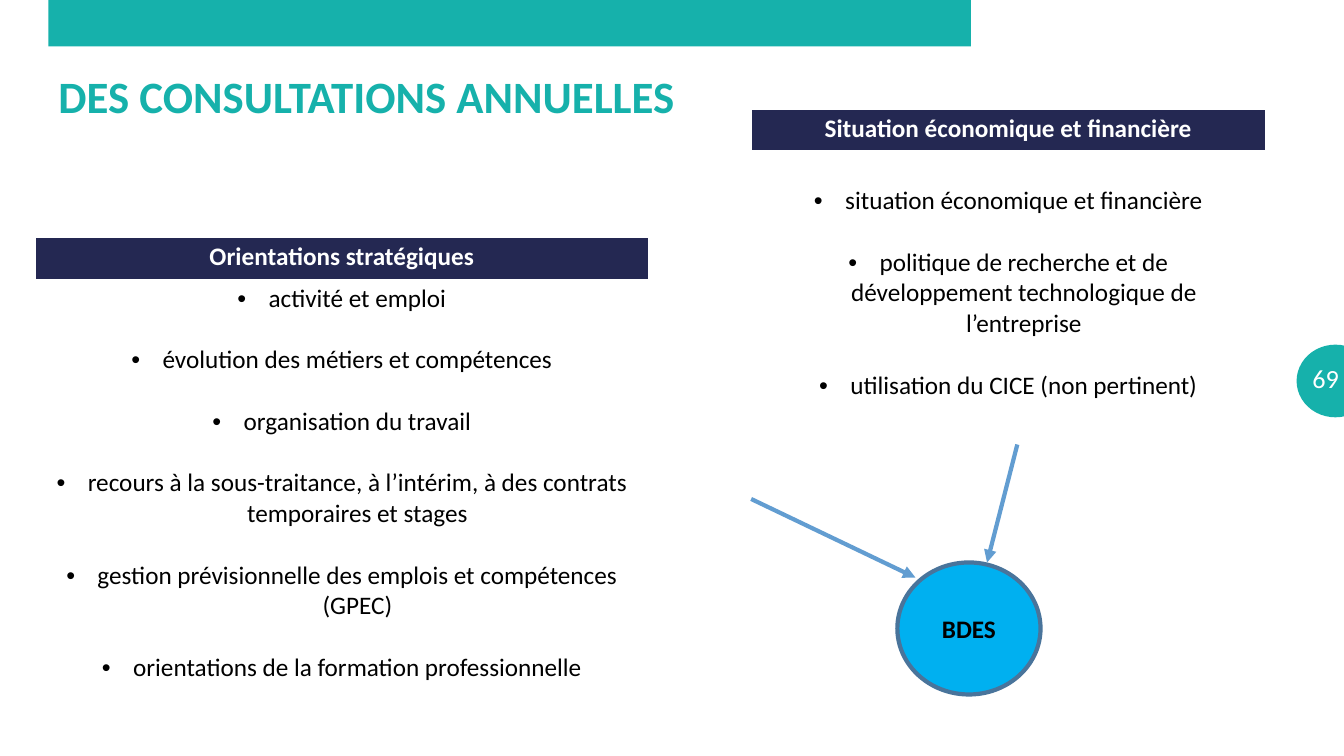
from lxml.etree import SubElement
from pptx import Presentation
from pptx.dml.color import RGBColor
from pptx.enum.shapes import MSO_CONNECTOR, MSO_SHAPE
from pptx.enum.text import MSO_ANCHOR, MSO_AUTO_SIZE, PP_ALIGN
from pptx.oxml.ns import qn
from pptx.util import Inches, Pt

TITLE = "DES CONSULTATIONS ANNUELLES"
PAGE_NUMBER = "69"
HUB = "BDES"
TEAL, NAVY, WHITE, BLACK = "16B1AB", "242852", "FFFFFF", "000000"
SKY, STEEL, ARROW_BLUE = "00B0F0", "49749B", "629DD1"
LINE_GAP = 22  # one empty line between bullets, in points

CONSULTATIONS = [
    {
        "heading": "Orientations stratégiques",
        "place": (0.35, 2.36, 6.08), "rows": (0.41, 4.28),
        "side_margin": 0.07, "body_top": 0.04,
        "topics": [
            "activité et emploi",
            "évolution des métiers et compétences",
            "organisation du travail",
            "recours à la sous-traitance, à l’intérim, à des contrats temporaires et stages",
            "gestion prévisionnelle des emplois et compétences (GPEC)",
            "orientations de la formation professionnelle",
        ],
    },
    {
        "heading": "Situation économique et financière",
        "place": (7.45, 1.09, 5.1), "rows": (0.4, 3.74),
        "side_margin": 0.14, "body_top": 0.35,
        "topics": [
            "situation économique et financière",
            "politique de recherche et de développement technologique de l’entreprise",
            "utilisation du CICE (non pertinent)",
        ],
    },
]
ARROWS = [((7.45, 4.95), (9.08, 5.73)), ((10.09, 4.41), (9.79, 5.58))]


def color(value):
    return RGBColor.from_string(value)


def inches(values):
    return [Inches(value) for value in values]


def set_all(target, values):
    for name, value in values.items():
        setattr(target, name, value)


def write(paragraph, text, size, ink, bold=False, align=PP_ALIGN.CENTER):
    paragraph.text = text
    paragraph.alignment = align
    set_all(paragraph.runs[0].font,
            {"name": "Calibri", "size": Pt(size), "bold": bold})
    paragraph.runs[0].font.color.rgb = color(ink)


def add_bullet(paragraph):
    properties = paragraph._p.get_or_add_pPr()
    properties.set("marL", str(Inches(0.31)))
    properties.set("indent", str(-Inches(0.31)))
    SubElement(properties, qn("a:buFont")).set("typeface", "Arial")
    SubElement(properties, qn("a:buChar")).set("char", "•")


def add_block(slide, kind, place, fill, outline=None, width=0):
    shape = slide.shapes.add_shape(kind, *inches(place))
    shape.shadow.inherit = False
    shape.fill.solid()
    shape.fill.fore_color.rgb = color(fill)
    if outline:
        shape.line.color.rgb = color(outline)
        shape.line.width = Pt(width)
    else:
        shape.line.fill.background()
    return shape


def add_consultation(slide, consultation):
    rows = consultation["rows"]
    frame = slide.shapes.add_table(
        2, 1, *inches((*consultation["place"], sum(rows))))
    table = frame.table
    table.horz_banding = False
    tops = (0.04, consultation["body_top"])
    for index, (height, top, fill) in enumerate(zip(rows, tops, (NAVY, WHITE))):
        table.rows[index].height = Inches(height)
        cell = table.cell(index, 0)
        cell.fill.solid()
        cell.fill.fore_color.rgb = color(fill)
        side = Inches(consultation["side_margin"])
        set_all(cell, {"margin_left": side, "margin_right": side,
                       "margin_top": Inches(top), "margin_bottom": Inches(0.04)})
    write(table.cell(0, 0).text_frame.paragraphs[0],
          consultation["heading"], 18, WHITE, bold=True)
    body = table.cell(1, 0).text_frame
    for index, topic in enumerate(consultation["topics"]):
        paragraph = body.add_paragraph() if index else body.paragraphs[0]
        if index:
            paragraph.space_before = Pt(LINE_GAP)
        add_bullet(paragraph)
        write(paragraph, topic, 18, BLACK)


def add_arrow(slide, start, end):
    arrow = slide.shapes.add_connector(
        MSO_CONNECTOR.STRAIGHT, *inches((*start, *end)))
    arrow.line.color.rgb = color(ARROW_BLUE)
    arrow.line.width = Pt(3)
    SubElement(arrow.line._get_or_add_ln(), qn("a:tailEnd")).set("type", "triangle")
    SubElement(arrow._element.spPr, qn("a:effectLst"))


def main():
    presentation = Presentation()
    presentation.slide_width, presentation.slide_height = inches((13.33, 7.5))
    slide = presentation.slides.add_slide(presentation.slide_layouts[5])

    add_block(slide, MSO_SHAPE.RECTANGLE, (0.48, 0, 9.15, 0.46), TEAL)
    add_block(slide, MSO_SHAPE.OVAL, (12.87, 3.43, 0.75, 0.7), TEAL, TEAL, 1.5)
    number = slide.shapes.add_textbox(*inches((12.83, 3.55, 0.58, 0.4))).text_frame
    set_all(number, {"word_wrap": True, "vertical_anchor": MSO_ANCHOR.MIDDLE,
                     "margin_left": Inches(0.13), "margin_right": Inches(0.13),
                     "margin_top": Inches(0.07), "margin_bottom": Inches(0.07)})
    write(number.paragraphs[0], PAGE_NUMBER, 18.7, WHITE, align=PP_ALIGN.RIGHT)

    title = slide.shapes.title
    set_all(title, dict(zip(("left", "top", "width", "height"),
                            inches((0.48, 0.6, 12.39, 0.77)))))
    set_all(title.text_frame, {"auto_size": MSO_AUTO_SIZE.NONE,
                               "vertical_anchor": MSO_ANCHOR.MIDDLE})
    heading = title.text_frame.paragraphs[0]
    write(heading, TITLE, 32, TEAL, bold=True, align=PP_ALIGN.LEFT)
    heading.line_spacing = 0.9

    for consultation in CONSULTATIONS:
        add_consultation(slide, consultation)

    hub = add_block(slide, MSO_SHAPE.OVAL, (8.9, 5.58, 1.42, 1.31), SKY, STEEL, 3)
    hub.text_frame.vertical_anchor = MSO_ANCHOR.MIDDLE
    write(hub.text_frame.paragraphs[0], HUB, 18, BLACK, bold=True)
    for start, end in ARROWS:
        add_arrow(slide, start, end)

    presentation.save("out.pptx")


if __name__ == "__main__":
    main()
